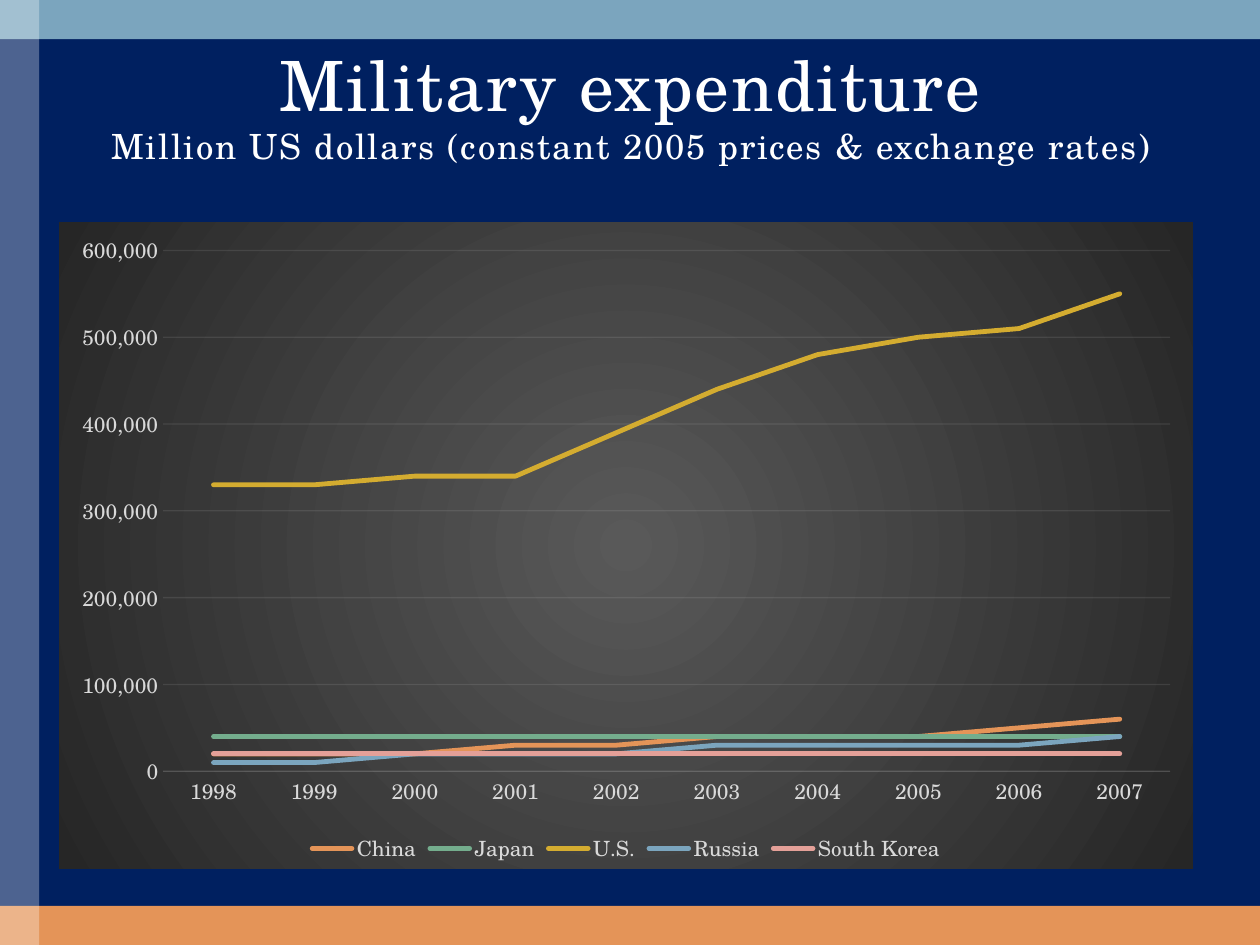
from lxml import etree
from pptx import Presentation
from pptx.chart.data import CategoryChartData
from pptx.dml.color import RGBColor
from pptx.enum.chart import XL_CHART_TYPE, XL_LEGEND_POSITION, XL_MARKER_STYLE, XL_TICK_MARK
from pptx.enum.shapes import MSO_SHAPE
from pptx.enum.text import MSO_ANCHOR, PP_ALIGN
from pptx.oxml import parse_xml
from pptx.oxml.ns import qn
from pptx.util import Cm, Pt

LINE_CHART = XL_CHART_TYPE.LINE
LEGEND_BOTTOM = XL_LEGEND_POSITION.BOTTOM
NO_MARKER = XL_MARKER_STYLE.NONE
NO_TICK = XL_TICK_MARK.NONE
RECTANGLE = MSO_SHAPE.RECTANGLE
MIDDLE = MSO_ANCHOR.MIDDLE
CENTER = PP_ALIGN.CENTER

PAGE_WIDTH, PAGE_HEIGHT, BAND = 25.4, 19.05, 0.79
FONT = "TeX Gyre Schola"
WHITE, LABEL, GRID = "FFFFFF", "D9D9D9", "F2F2F2"
ORANGE, BLUE = "E49458", "7BA5BE"

YEARS = [str(year) for year in range(1998, 2008)]
SPENDING_UNIT = 10000
SPENDING = [
    ("China", ORANGE, [2, 2, 2, 3, 3, 4, 4, 4, 5, 6]),
    ("Japan", "74AD8D", [4] * len(YEARS)),
    ("U.S.", "D4AC30", [33, 33, 34, 34, 39, 44, 48, 50, 51, 55]),
    ("Russia", BLUE, [1, 1, 2, 2, 2, 3, 3, 3, 3, 4]),
    ("South Korea", "E4A098", [2] * len(YEARS)),
]

CHART_FILL = """
<c:spPr xmlns:c="http://schemas.openxmlformats.org/drawingml/2006/chart"
        xmlns:a="http://schemas.openxmlformats.org/drawingml/2006/main">
  <a:gradFill>
    <a:gsLst>
      <a:gs pos="0"><a:srgbClr val="595959"/></a:gs>
      <a:gs pos="100000"><a:srgbClr val="262626"/></a:gs>
    </a:gsLst>
    <a:path path="circle"><a:fillToRect l="50000" t="50000" r="50000" b="50000"/></a:path>
  </a:gradFill>
  <a:ln><a:noFill/></a:ln>
</c:spPr>"""


def color(value):
    return RGBColor.from_string(value)


def set_alpha(fill_parent, percent):
    for tint in fill_parent.iter(qn("a:srgbClr")):
        etree.SubElement(tint, qn("a:alpha")).set("val", str(percent * 1000))


def style_font(font, size, tint):
    font.name = FONT
    font.size = Pt(size)
    font.color.rgb = color(tint)


def style_faint_line(line):
    line.color.rgb = color(GRID)
    line.width = Pt(0.75)
    set_alpha(line._ln, 10)


def add_band(page, left, top, width, height, tint, opacity=100):
    band = page.shapes.add_shape(RECTANGLE, Cm(left), Cm(top), Cm(width), Cm(height))
    band.shadow.inherit = False
    band.fill.solid()
    band.fill.fore_color.rgb = color(tint)
    band.line.fill.background()
    if opacity < 100:
        set_alpha(band._element.spPr, opacity)


def add_frame(page, left, top, width, height):
    add_band(page, left, top + height - BAND, width, BAND, ORANGE)
    add_band(page, left, top, width, BAND, BLUE)
    add_band(page, left, top, BAND, height, WHITE, 30)


def add_title(page, left, top, width, height):
    box = page.shapes.add_textbox(Cm(left), Cm(top), Cm(width), Cm(height))
    frame = box.text_frame
    frame.word_wrap = True
    frame.vertical_anchor = MIDDLE
    para = frame.paragraphs[0]
    para.alignment = CENTER
    lines = [
        ("Military expenditure", 39.6),
        ("Million US dollars (constant 2005 prices & exchange rates)", 19.8),
    ]
    for index, (text, size) in enumerate(lines):
        if index:
            para.add_line_break()
        span = para.add_run()
        span.text = text
        style_font(span.font, size, WHITE)
        span.font._element.set("spc", "100")


def place_plot(chart, left, top, width, height):
    plot_area = chart._chartSpace.chart.plotArea
    for layout in plot_area.findall(qn("c:layout")):
        plot_area.remove(layout)
    layout = etree.Element(qn("c:layout"))
    manual = etree.SubElement(layout, qn("c:manualLayout"))
    settings = [
        ("layoutTarget", "inner"), ("xMode", "edge"), ("yMode", "edge"),
        ("x", left), ("y", top), ("w", width), ("h", height),
    ]
    for name, value in settings:
        etree.SubElement(manual, qn(f"c:{name}")).set("val", str(value))
    plot_area.insert(0, layout)


def add_spending_chart(page, left, top, width, height):
    data = CategoryChartData(number_format="#,##0")
    data.categories = YEARS
    for name, _, amounts in SPENDING:
        data.add_series(name, [amount * SPENDING_UNIT for amount in amounts])
    chart = page.shapes.add_chart(
        LINE_CHART, Cm(left), Cm(top), Cm(width), Cm(height), data
    ).chart
    style_font(chart.font, 10, WHITE)
    chart._chartSpace.chart.addnext(parse_xml(CHART_FILL))
    chart.has_title = False
    chart.has_legend = True
    chart.legend.position = LEGEND_BOTTOM
    chart.legend.include_in_layout = False
    style_font(chart.legend.font, 12, LABEL)

    years, dollars = chart.category_axis, chart.value_axis
    for axis in (years, dollars):
        axis.major_tick_mark = axis.minor_tick_mark = NO_TICK
        style_font(axis.tick_labels.font, 12, LABEL)
    style_faint_line(years.format.line)
    dollars.format.line.fill.background()
    dollars.has_major_gridlines = True
    style_faint_line(dollars.major_gridlines.format.line)
    dollars.minimum_scale, dollars.maximum_scale = 0, 600000
    dollars.major_unit = 100000
    dollars.tick_labels.number_format = "#,##0"
    dollars.tick_labels.number_format_is_linked = False

    plot = chart.plots[0]
    plot.vary_by_categories = False
    for series, (_, tint, _) in zip(plot.series, SPENDING):
        series.smooth = False
        series.marker.style = NO_MARKER
        line = series.format.line
        line.color.rgb = color(tint)
        line.width = Pt(2.75)
        line._ln.set("cap", "rnd")
    place_plot(chart, 2.1 / width, 0.57 / height, 20.3 / width, 10.5 / height)


def main():
    deck = Presentation()
    deck.slide_width, deck.slide_height = Cm(PAGE_WIDTH), Cm(PAGE_HEIGHT)
    page = deck.slides.add_slide(deck.slide_layouts[6])
    page.background.fill.solid()
    page.background.fill.fore_color.rgb = color("002060")
    add_frame(page, 0, 0, PAGE_WIDTH, PAGE_HEIGHT)
    add_spending_chart(page, 1.19, 4.48, 22.86, 13.03)
    add_title(page, 0.84, BAND, 23.77, 2.62)
    deck.save("out.pptx")


if __name__ == "__main__":
    main()
